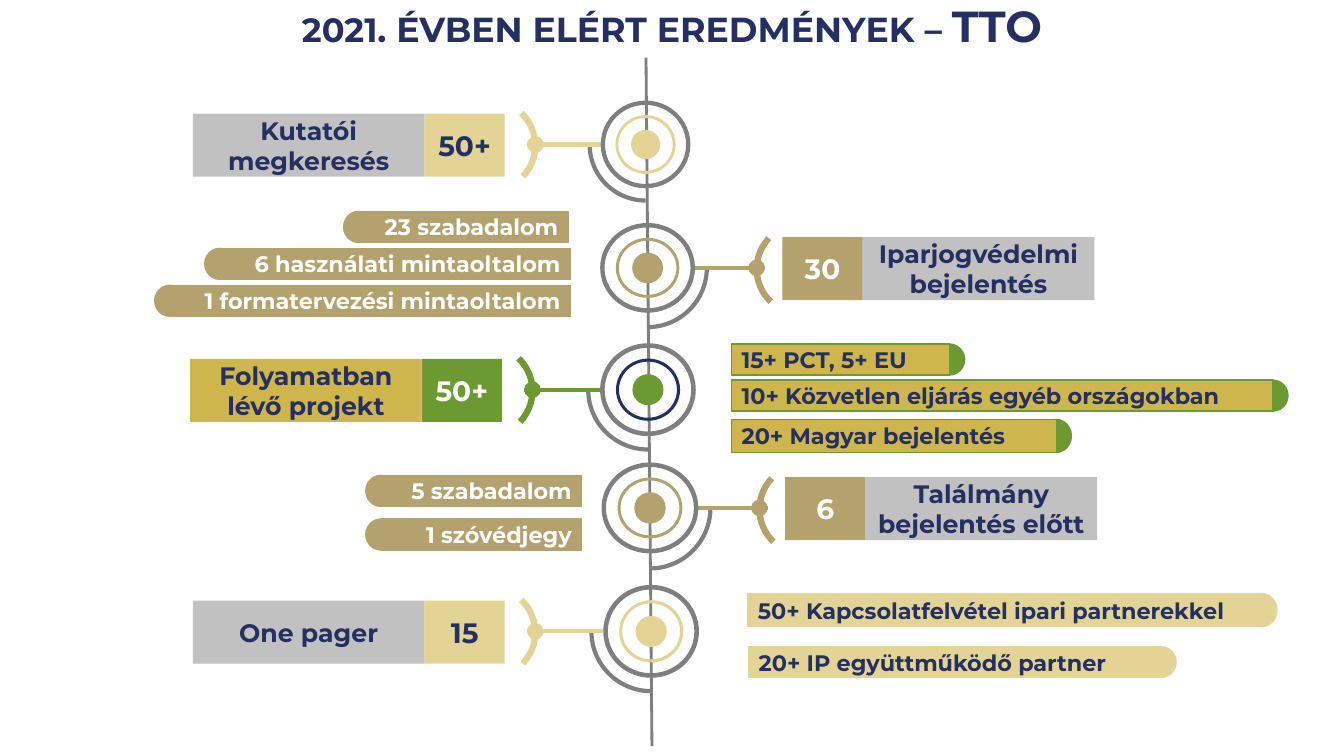
"""Builds the 2021 results timeline slide of the TTO."""
from dataclasses import dataclass

from lxml.etree import SubElement
from pptx import Presentation
from pptx.dml.color import RGBColor
from pptx.enum.shapes import MSO_CONNECTOR, MSO_SHAPE
from pptx.enum.text import MSO_ANCHOR, MSO_AUTO_SIZE, PP_ALIGN
from pptx.oxml.ns import qn
from pptx.util import Cm, Pt


@dataclass(frozen=True)
class Theme:
    font: str = "Montserrat"
    navy: str = "242F62"
    white: str = "FFFFFF"
    gray: str = "7F7F7F"
    silver: str = "C1C1C1"
    sand: str = "E3D496"
    khaki: str = "B3A16E"
    gold: str = "CFB64C"
    green: str = "6D9933"
    title: int = 30
    title_end: int = 31
    value: int = 20
    label: int = 18
    bar: int = 16


T = Theme()

# side, centre x, centre y, ring width, ring height, tip x, label, value, colour, inner ring, label fill, value text
MILESTONES = [
    ("left", 16.27, 3.64, 2.26, 2.21, 13.28, "Kutatói\nmegkeresés", "50+", T.sand, T.sand, T.silver, T.navy),
    ("right", 16.32, 6.75, 2.39, 2.26, 19.28, "Iparjogvédelmi\nbejelentés", "30", T.khaki, T.khaki, T.silver, T.white),
    ("left", 16.33, 9.82, 2.41, 2.34, 13.21, "Folyamatban lévő projekt", "50+", T.green, T.navy, T.gold, T.white),
    ("right", 16.38, 12.8, 2.44, 2.29, 19.35, "Találmány bejelentés előtt", "6", T.khaki, T.khaki, T.silver, T.white),
    ("left", 16.41, 15.91, 2.41, 2.34, 13.28, "One pager", "15", T.sand, T.sand, T.silver, T.navy),
]

# round end, x, y, width, height, text, fill, edge, text colour
BARS = [
    ("left", 9.04, 5.33, 5.28, 0.78, "23 szabadalom", T.khaki, T.khaki, T.white),
    ("left", 5.54, 6.26, 8.84, 0.78, "6 használati mintaoltalom", T.khaki, T.khaki, T.white),
    ("left", 4.28, 7.19, 10.1, 0.78, "1 formatervezési mintaoltalom", T.khaki, T.khaki, T.white),
    ("right", 18.44, 8.67, 5.49, 0.78, "15+ PCT, 5+ EU", T.gold, T.green, T.navy),
    ("right", 18.44, 9.58, 13.64, 0.78, "10+ Közvetlen eljárás egyéb országokban", T.gold, T.green, T.navy),
    ("right", 18.44, 10.57, 8.18, 0.83, "20+ Magyar bejelentés", T.gold, T.green, T.navy),
    ("left", 9.6, 11.98, 5.06, 0.78, "5 szabadalom", T.khaki, T.khaki, T.white),
    ("left", 9.6, 13.08, 5.06, 0.78, "1 szóvédjegy", T.khaki, T.khaki, T.white),
    ("right", 18.85, 14.96, 12.95, 0.83, "50+ Kapcsolatfelvétel ipari partnerekkel", T.sand, T.sand, T.navy),
    ("right", 18.87, 16.3, 10.39, 0.77, "20+ IP együttműködő partner", T.sand, T.sand, T.navy),
]


def write(p, text, size, color, align=PP_ALIGN.CENTER, caps=False):
    p.alignment = align
    r = p.add_run()
    r.text = text
    r.font.name = T.font
    r.font.size = Pt(size)
    r.font.bold = True
    r.font.color.rgb = RGBColor.from_string(color)
    if caps:
        r._r.get_or_add_rPr().set("cap", "small")


class Timeline:
    def __init__(self, prs, theme):
        self.theme = theme
        self.slide = prs.slides.add_slide(prs.slide_layouts[5])

    def title(self, *runs):
        sp = self.slide.shapes.title
        sp.left, sp.top, sp.width, sp.height = Cm(0), Cm(0), Cm(33.87), Cm(1.37)
        tf = sp.text_frame
        tf.auto_size = MSO_AUTO_SIZE.NONE
        tf.vertical_anchor = MSO_ANCHOR.TOP
        p = tf.paragraphs[0]
        p.line_spacing = 0.9
        for text, size in runs:
            write(p, text, size, self.theme.navy, caps=True)

    def shape(self, kind, x, y, w, h, fill=None, line=None, weight=1):
        sp = self.slide.shapes.add_shape(kind, Cm(x), Cm(y), Cm(w), Cm(h))
        sp.shadow.inherit = False
        if fill:
            sp.fill.solid()
            sp.fill.fore_color.rgb = RGBColor.from_string(fill)
        else:
            sp.fill.background()
        if line:
            sp.line.color.rgb = RGBColor.from_string(line)
            sp.line.width = Pt(weight)
        else:
            sp.line.fill.background()
        return sp

    def centred(self, kind, cx, cy, w, h, **style):
        return self.shape(kind, cx - w / 2, cy - h / 2, w, h, **style)

    def ring(self, cx, cy, w, h, color):
        self.centred(MSO_SHAPE.DONUT, cx, cy, w, h, fill=color).adjustments[0] = 0.049

    def arc(self, cx, cy, size, start, end, color, weight):
        sp = self.centred(MSO_SHAPE.ARC, cx, cy, size, size, line=color, weight=weight)
        for i, degrees in enumerate((start, end)):
            sp.adjustments[i] = degrees * 0.6

    def line(self, x1, y1, x2, y2, color, weight):
        cn = self.slide.shapes.add_connector(MSO_CONNECTOR.STRAIGHT, Cm(x1), Cm(y1), Cm(x2), Cm(y2))
        cn.line.color.rgb = RGBColor.from_string(color)
        cn.line.width = Pt(weight)
        SubElement(cn._element.spPr, qn("a:effectLst"))

    def box(self, x, y, w, h, text, size, color, align=PP_ALIGN.CENTER, **style):
        tf = self.shape(MSO_SHAPE.RECTANGLE, x, y, w, h, **style).text_frame
        tf.word_wrap = True
        tf.vertical_anchor = MSO_ANCHOR.MIDDLE
        for i, part in enumerate(text.split("\n")):
            p = tf.add_paragraph() if i else tf.paragraphs[0]
            write(p, part, size, color, align)

    def bar(self, end, x, y, w, h, text, fill, edge, color):
        on_left = end == "left"
        cap_x = x if on_left else x + w
        self.centred(MSO_SHAPE.OVAL, cap_x, y + h / 2, 0.76, h, fill=edge, line=edge)
        align = PP_ALIGN.RIGHT if on_left else PP_ALIGN.LEFT
        self.box(x, y, w, h, text, self.theme.bar, color, align, fill=fill, line=edge)

    def milestone(self, side, cx, cy, w, h, tip, label, value, color, inner, label_fill, value_color):
        t = self.theme
        on_left = side == "left"
        out = -1 if on_left else 1
        sweep = (90, 180) if on_left else (0, 90)
        bracket = (313.6, 43.6) if on_left else (133.4, 223.4)
        self.arc(cx, cy, 1.25 * w, *sweep, t.gray, 3)
        self.line(cx + out * w / 2, cy, tip, cy, color, 3)
        self.centred(MSO_SHAPE.OVAL, tip - out * 0.21, cy, 0.42, 0.42, fill=color)
        self.centred(MSO_SHAPE.OVAL, cx, cy, 0.325 * w, 0.325 * w, fill=color)
        self.ring(cx, cy, 0.67 * w, 0.67 * h, inner)
        self.ring(cx, cy, w, h, t.gray)
        self.arc(tip + out * 0.92, cy + 0.03, 2.26, *bracket, color, 4.5)

        value_w, label_w, box_h = 2.02, 5.84, 1.59
        value_x = tip - 0.56 - value_w if on_left else tip + 0.44
        label_x = value_x - label_w if on_left else value_x + value_w
        top = cy + 0.02 - box_h / 2
        self.box(label_x, top, label_w, box_h, label, t.label, t.navy, fill=label_fill)
        self.box(value_x, top, value_w, box_h, value, t.value, value_color, fill=color)


def main():
    prs = Presentation()
    prs.slide_width, prs.slide_height = Cm(33.87), Cm(19.05)
    s = Timeline(prs, T)
    s.title(("2021", T.title), (". évben elért eredmények – TTO", T.title_end))
    s.line(16.43, 18.8, 16.28, 1.45, T.gray, 2)
    for milestone in MILESTONES:
        s.milestone(*milestone)
    for bar in BARS:
        s.bar(*bar)
    prs.save("out.pptx")


if __name__ == "__main__":
    main()
